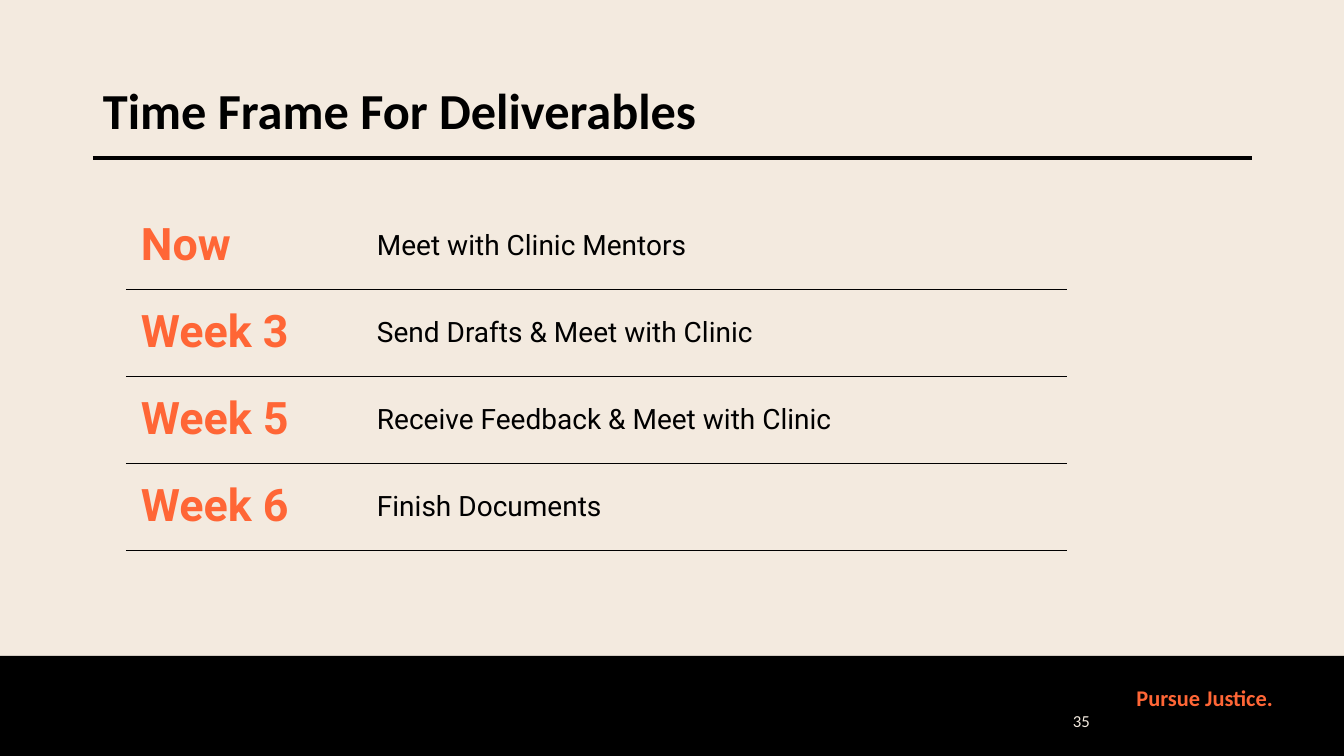
"""Build the slide with the time frame for deliverables."""
from dataclasses import dataclass

from lxml.etree import SubElement
from pptx import Presentation
from pptx.dml.color import RGBColor
from pptx.enum.shapes import MSO_CONNECTOR, MSO_SHAPE
from pptx.enum.text import MSO_ANCHOR
from pptx.oxml.ns import qn
from pptx.util import Emu, Pt


@dataclass(frozen=True)
class Theme:
    """Colours, fonts and type formats of the slide."""
    cream: str = "F3EADF"
    black: str = "000000"
    orange: str = "FF6636"
    heading: str = "Calibri"
    body: str = "Roboto"

    def style(self, role):
        """Return the font format of a text role."""
        font, size, bold, colour = {
            "title": (self.heading, 36, True, self.black),
            "slogan": (self.heading, 16, True, self.orange),
            "number": (self.heading, 12, False, self.cream),
            "date": (self.body, 32, True, self.orange),
            "task": (self.body, 20, False, self.black),
        }[role]
        return {"name": font, "size": Pt(size), "bold": bold}, colour


THEME = Theme()
SLIDE_WIDTH, SLIDE_HEIGHT = 1344, 756
FOOTER_TOP = 656
TABLE_LEFT, TABLE_TOP, ROW_HEIGHT = 126, 202, 87
COLUMN_WIDTHS = (236, 705)
CELL_MARGIN = 15
SCHEDULE = [
    ("Now", "Meet with Clinic Mentors"),
    ("Week 3", "Send Drafts & Meet with Clinic"),
    ("Week 5", "Receive Feedback & Meet with Clinic"),
    ("Week 6", "Finish Documents"),
]


def px(length):
    """Turn pixels into EMU."""
    return Emu(round(length * 914400 / 100.8))


def rgb(colour):
    """Turn a hex string into a colour."""
    return RGBColor.from_string(colour)


def add_span(para, text, role):
    """Add a run formatted for its role."""
    span = para.add_run()
    span.text = text
    values, colour = THEME.style(role)
    for name, value in values.items():
        setattr(span.font, name, value)
    span.font.color.rgb = rgb(colour)


def add_box(page, bounds, spans, tabs=(), spacing=1.0):
    """Add a one-paragraph text box with optional tab stops."""
    frame = page.shapes.add_textbox(*map(px, bounds)).text_frame
    frame.word_wrap = True
    frame.vertical_anchor = MSO_ANCHOR.MIDDLE
    para = frame.paragraphs[0]
    para.line_spacing = spacing
    if tabs:
        stops = SubElement(para._p.get_or_add_pPr(), qn("a:tabLst"))
        for position, align in tabs:
            SubElement(stops, qn("a:tab"), pos=str(px(position)), algn=align)
    for text, role in spans:
        add_span(para, text, role)


def add_band(page, bounds, colour):
    """Add a plain filled rectangle."""
    band = page.shapes.add_shape(MSO_SHAPE.RECTANGLE, *map(px, bounds))
    band.shadow.inherit = False
    band.fill.solid()
    band.fill.fore_color.rgb = rgb(colour)
    band.line.fill.background()


def add_rule(page, ends, colour, width):
    """Add a straight line."""
    rule = page.shapes.add_connector(MSO_CONNECTOR.STRAIGHT, *map(px, ends))
    rule.line.color.rgb = rgb(colour)
    rule.line.width = Pt(width)
    SubElement(rule._element.spPr, qn("a:effectLst"))


def set_borders(cell, visible):
    """Draw the visible sides of a cell and clear the others."""
    properties = cell._tc.get_or_add_tcPr()
    for side in "LRTB":
        line = SubElement(properties, qn(f"a:ln{side}"), w=str(Pt(0.5)))
        if side in visible:
            fill = SubElement(line, qn("a:solidFill"))
            SubElement(fill, qn("a:srgbClr"), val=THEME.black)
        else:
            SubElement(line, qn("a:noFill"))


def add_schedule(page):
    """Add the table of dates and tasks with an empty closing row."""
    rows = SCHEDULE + [("", "")]
    bounds = (TABLE_LEFT, TABLE_TOP, sum(COLUMN_WIDTHS), ROW_HEIGHT * len(rows))
    table = page.shapes.add_table(
        len(rows), len(COLUMN_WIDTHS), *map(px, bounds)).table
    table.first_row = table.horz_banding = False
    for column, width in zip(table.columns, COLUMN_WIDTHS):
        column.width = px(width)
    for index, texts in enumerate(rows):
        table.rows[index].height = px(ROW_HEIGHT)
        visible = ("T" if index else "") + ("B" if index < len(SCHEDULE) else "")
        for cell, text, role in zip(table.rows[index].cells, texts, ("date", "task")):
            set_borders(cell, visible)
            cell.fill.background()
            cell.vertical_anchor = MSO_ANCHOR.MIDDLE
            for side in ("left", "right", "top", "bottom"):
                setattr(cell, f"margin_{side}", px(CELL_MARGIN))
            if text:
                add_span(cell.text_frame.paragraphs[0], text, role)


def main():
    """Build and save the deck."""
    deck = Presentation()
    deck.slide_width, deck.slide_height = px(SLIDE_WIDTH), px(SLIDE_HEIGHT)
    page = deck.slides.add_slide(deck.slide_layouts[6])
    page.background.fill.solid()
    page.background.fill.fore_color.rgb = rgb(THEME.cream)
    add_band(page, (0, FOOTER_TOP, SLIDE_WIDTH, SLIDE_HEIGHT - FOOTER_TOP), THEME.black)
    add_rule(page, (93, 158, 1252, 158), THEME.black, 2.5)
    add_box(page, (1063, 689, 257, 37),
            [("\tPursue Justice.", "slogan"), ("\t35", "number")],
            tabs=[(200, "r"), (221, "l")])
    add_box(page, (93, 40, 1159, 146),
            [("Time Frame For Deliverables", "title")], spacing=0.9)
    add_schedule(page)
    deck.save("out.pptx")


if __name__ == "__main__":
    main()
